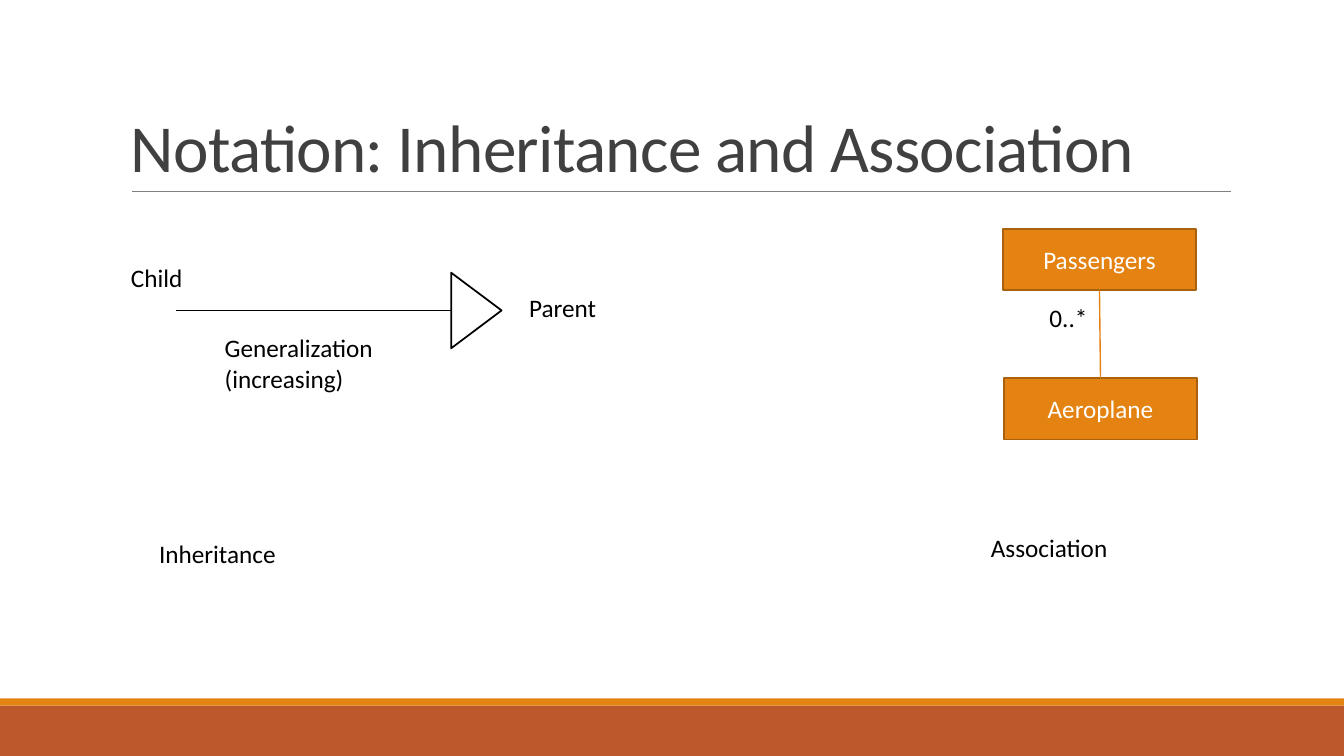
from dataclasses import dataclass

from pptx import Presentation
from pptx.dml.color import RGBColor
from pptx.enum.shapes import MSO_CONNECTOR, MSO_SHAPE
from pptx.enum.text import MSO_ANCHOR, PP_ALIGN
from pptx.oxml.ns import qn
from pptx.util import Inches, Pt
from lxml.etree import SubElement


@dataclass(frozen=True)
class Theme:
    font: str = "Calibri"
    title: int = 48
    body: int = 18
    black: str = "000000"
    white: str = "FFFFFF"
    dark: str = "404040"
    gray: str = "808080"
    orange: str = "E48312"
    brown: str = "A9610D"
    rust: str = "BD582C"


THEME = Theme()


def write(frame, text, size=THEME.body, color=THEME.black, align=PP_ALIGN.LEFT,
          anchor=MSO_ANCHOR.TOP, leading=None, spacing=None):
    """Put formatted text into a text frame."""
    frame.word_wrap = True
    frame.vertical_anchor = anchor
    para = frame.paragraphs[0]
    para.alignment = align
    if leading:
        para.line_spacing = leading
    run = para.add_run()
    run.text = text
    run.font.name = THEME.font
    run.font.size = Pt(size)
    run.font.color.rgb = RGBColor.from_string(color)
    if spacing:
        run._r.get_or_add_rPr().set("spc", str(int(spacing * 100)))


def add_text(slide, text, x, y, w, h=0.4, **style):
    box = slide.shapes.add_textbox(Inches(x), Inches(y), Inches(w), Inches(h))
    write(box.text_frame, text, **style)


def add_shape(slide, kind, x, y, w, h, fill=None, line=None):
    shape = slide.shapes.add_shape(kind, Inches(x), Inches(y), Inches(w), Inches(h))
    shape.shadow.inherit = False
    if fill:
        shape.fill.solid()
        shape.fill.fore_color.rgb = RGBColor.from_string(fill)
    else:
        shape.fill.background()
    if line:
        shape.line.color.rgb = RGBColor.from_string(line)
        shape.line.width = Pt(1.25)
    else:
        shape.line.fill.background()
    return shape


def add_class(slide, name, x, y):
    box = add_shape(slide, MSO_SHAPE.RECTANGLE, x, y, 1.91, 0.61,
                    fill=THEME.orange, line=THEME.brown)
    write(box.text_frame, name, color=THEME.white, align=PP_ALIGN.CENTER,
          anchor=MSO_ANCHOR.MIDDLE)
    return box


def add_line(slide, start, end, color, width=1):
    line = slide.shapes.add_connector(
        MSO_CONNECTOR.STRAIGHT, *(Inches(v) for v in (*start, *end)))
    line.line.color.rgb = RGBColor.from_string(color)
    line.line.width = Pt(width)
    SubElement(line._element.spPr, qn("a:effectLst"))
    return line


def add_frame(slide):
    # Footer bands, title and its rule
    add_shape(slide, MSO_SHAPE.RECTANGLE, 0, 7, 13.33, 0.5, fill=THEME.rust)
    add_shape(slide, MSO_SHAPE.RECTANGLE, 0, 6.93, 13.33, 0.07, fill=THEME.orange)
    add_line(slide, (1.31, 1.9), (12.21, 1.9), THEME.gray, 0.5)
    add_text(slide, "Notation: Inheritance and Association", 1.2, 0.31, 11, 1.59,
             size=THEME.title, color=THEME.dark, anchor=MSO_ANCHOR.BOTTOM,
             leading=0.85, spacing=-0.5)


def add_parent(slide):
    # Inheritance arrow with its labels
    add_line(slide, (1.75, 3.08), (4.48, 3.08), THEME.black)
    head = add_shape(slide, MSO_SHAPE.ISOSCELES_TRIANGLE, 4.35, 2.83, 0.75, 0.5,
                     line=THEME.black)
    head.rotation = 90
    add_text(slide, "Child", 1.2, 2.55, 2.18)
    add_text(slide, "Generalization (increasing)", 2.13, 3.25, 2.18, 0.71)
    add_text(slide, "Parent", 5.15, 2.85, 2.18)
    add_text(slide, "Inheritance", 1.48, 5.29, 2.93)


def add_link(slide):
    # Association between two classes
    plane = add_class(slide, "Aeroplane", 9.96, 3.75)
    people = add_class(slide, "Passengers", 9.95, 2.27)
    link = add_line(slide, (10.91, 2.88), (10.92, 3.75), THEME.orange)
    link.begin_connect(people, 2)
    link.end_connect(plane, 0)
    add_text(slide, "0..*", 10.31, 2.95, 0.89)
    add_text(slide, "Association", 9.73, 5.23, 2.93)


def main():
    deck = Presentation()
    deck.slide_width = Inches(13.33)
    deck.slide_height = Inches(7.5)
    slide = deck.slides.add_slide(deck.slide_layouts[6])
    add_frame(slide)
    add_parent(slide)
    add_link(slide)
    deck.save("out.pptx")


if __name__ == "__main__":
    main()
